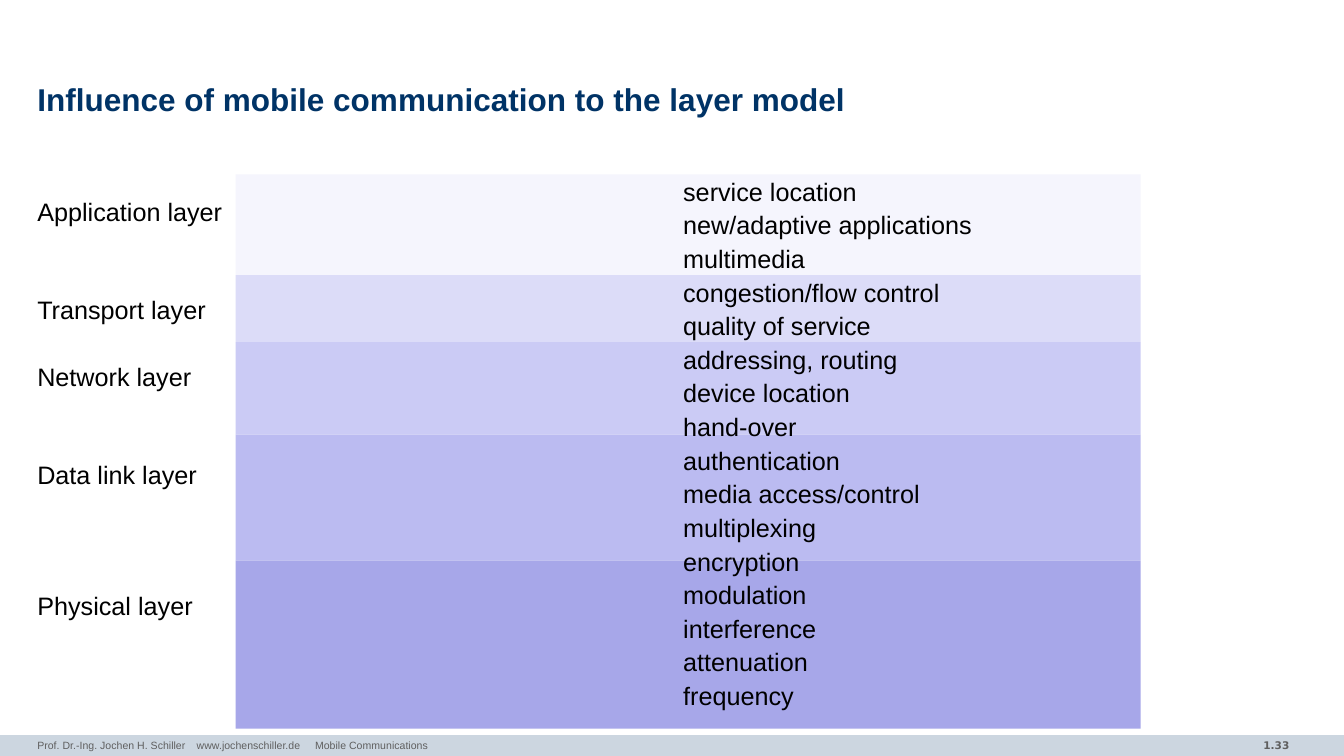
import pptx
import pptx.util
import pptx.dml.color
import pptx.enum.shapes
import pptx.enum.text
import pptx.oxml
import pptx.oxml.ns

Pt = pptx.util.Pt
RGB = pptx.dml.color.RGBColor
Align = pptx.enum.text.PP_ALIGN
Anchor = pptx.enum.text.MSO_ANCHOR

NAVY = RGB(0x00, 0x33, 0x66)
BLACK = RGB(0x00, 0x00, 0x00)
GREY = RGB(0x5F, 0x5F, 0x5F)
BAR = RGB(0xCC, 0xD6, 0xE0)

EDGE = 26.64   # left margin of all text
PITCH = 23.19  # distance from one topic line to the next
GAP = 4.57     # space before a topic line

# Layer name, band height, band colour, topics
LAYERS = [
    ("Application layer", 72, RGB(0xF5, 0xF5, 0xFD),
     ["service location", "new/adaptive applications", "multimedia"]),
    ("Transport layer", 48, RGB(0xDC, 0xDC, 0xF8),
     ["congestion/flow control", "quality of service"]),
    ("Network layer", 66, RGB(0xCB, 0xCB, 0xF5),
     ["addressing, routing", "device location", "hand-over"]),
    ("Data link layer", 90, RGB(0xBB, 0xBB, 0xF1),
     ["authentication", "media access/control", "multiplexing", "encryption"]),
    ("Physical layer", 120, RGB(0xA7, 0xA7, 0xE9),
     ["modulation", "interference", "attenuation", "frequency"]),
]


class Page:
    def __init__(self, slide, font="Arial"):
        self.slide = slide
        self.font = font

    def band(self, x, y, w, h, fill):
        box = self.slide.shapes.add_shape(
            pptx.enum.shapes.MSO_SHAPE.RECTANGLE, Pt(x), Pt(y), Pt(w), Pt(h))
        box.shadow.inherit = False
        box.fill.solid()
        box.fill.fore_color.rgb = fill
        box.line.fill.background()

    def text(self, x, y, w, h, lines, size, color, bold=False, font=None,
             align=Align.LEFT, anchor=Anchor.TOP, pitch=1.0, gaps=None, tabs=()):
        frame = self.slide.shapes.add_textbox(Pt(x), Pt(y), Pt(w), Pt(h)).text_frame
        frame.word_wrap = True
        frame.vertical_anchor = anchor
        frame.margin_left = frame.margin_right = 0
        frame.margin_top = frame.margin_bottom = 0
        for i, line in enumerate(lines):
            para = frame.paragraphs[0] if i == 0 else frame.add_paragraph()
            para.text = line
            para.alignment = align
            para.line_spacing = pitch
            if i > 0 and gaps:
                para.space_before = Pt(gaps[i])
            if tabs:
                self.stops(para, tabs)
            para.font.name = font or self.font
            para.font.size = Pt(size)
            para.font.bold = bold
            para.font.color.rgb = color

    def stops(self, para, tabs):
        qn = pptx.oxml.ns.qn
        props = para._p.get_or_add_pPr()
        group = props.makeelement(qn("a:tabLst"), {})
        props.append(group)
        for pos in tabs:
            stop = group.makeelement(qn("a:tab"), {"pos": str(Pt(pos)), "algn": "l"})
            group.append(stop)


def main():
    deck = pptx.Presentation()
    deck.slide_width, deck.slide_height = Pt(960), Pt(540)
    page = Page(deck.slides.add_slide(deck.slide_layouts[6]))

    # Title
    page.text(EDGE, 56, 907, 34, ["Influence of mobile communication to the layer model"],
              22.5, NAVY, bold=True, anchor=Anchor.MIDDLE, pitch=0.85)

    # Layer bands
    top = 124.5
    for name, high, fill, topics in LAYERS:
        page.band(168.3, top, 646.5, high, fill)
        top += high

    # Layer names, each level with its layer's first topics
    names = [layer[0] for layer in LAYERS]
    counts = [len(layer[3]) for layer in LAYERS]
    gaps = [0] + [GAP + PITCH * (n - 1) for n in counts[:-1]]
    page.text(EDGE, 142.6, 140, 355, names, 18, BLACK, pitch=0.9, gaps=gaps)

    # Topics
    topics = [topic for layer in LAYERS for topic in layer[3]]
    page.text(488, 128.2, 446, 392, topics, 18, BLACK, pitch=0.9,
              gaps=[GAP] * len(topics))

    # Footer
    page.band(0, 525, 960, 15, BAR)
    page.text(EDGE, 525, 628, 15,
              ["Prof. Dr.-Ing. Jochen H. Schiller\twww.jochenschiller.de\tMobile Communications"],
              7.5, GREY, anchor=Anchor.MIDDLE, tabs=(113.9, 198.4))
    page.text(800, 525, 121, 15, ["1.33"], 7.5, GREY, bold=True,
              font="DejaVu Sans", align=Align.RIGHT, anchor=Anchor.MIDDLE)

    deck.save("out.pptx")


if __name__ == "__main__":
    main()
